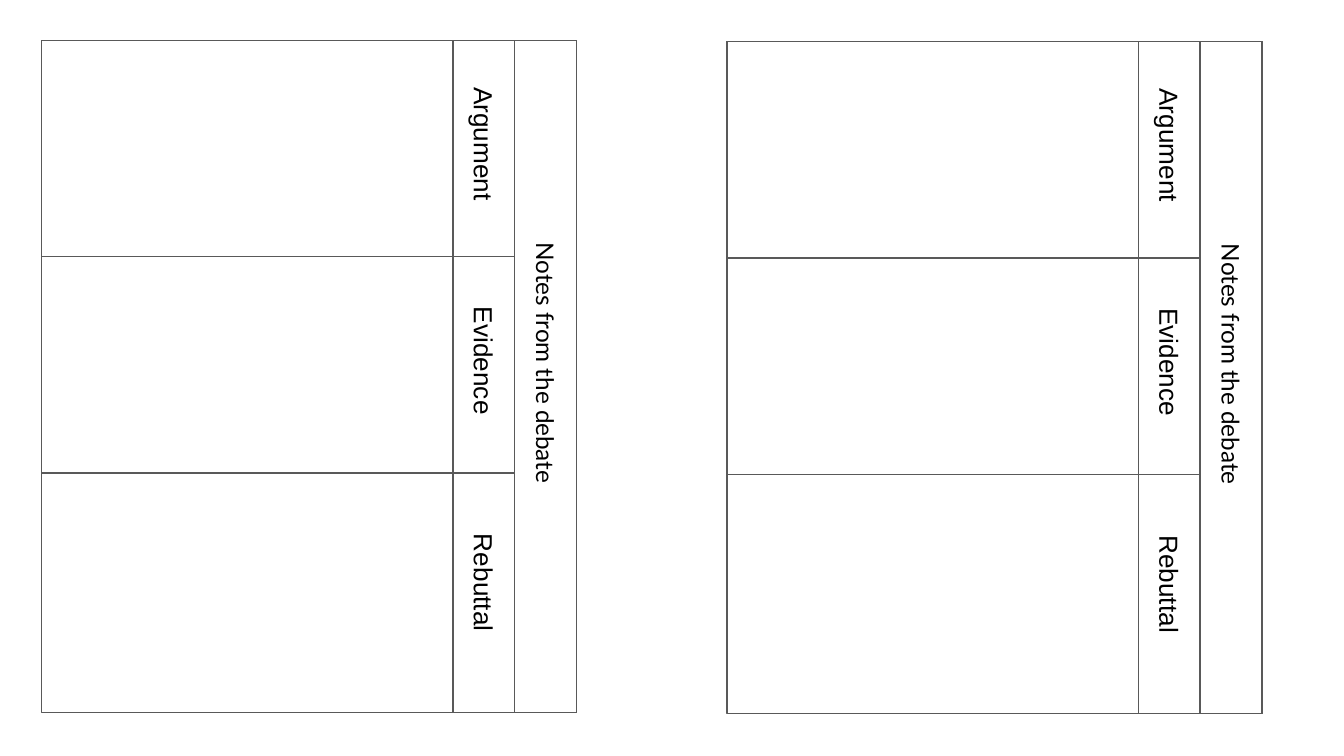
import pptx
import pptx.util
from dataclasses import dataclass
from pptx.dml.color import RGBColor
from pptx.enum.shapes import MSO_SHAPE
from pptx.enum.text import MSO_AUTO_SIZE, PP_ALIGN

Inches, Pt = pptx.util.Inches, pptx.util.Pt


@dataclass(frozen=True)
class Theme:
    paper: RGBColor = RGBColor(0xFF, 0xFF, 0xFF)
    rule: RGBColor = RGBColor(0x59, 0x59, 0x59)
    ink: RGBColor = RGBColor(0, 0, 0)
    line: float = 0.75
    label: tuple = ("Arial", 14)
    title: tuple = ("Lato", 13)


THEME = Theme()

# Content: label, text box length, centre measured from the top of the sheet
TITLE = ("Notes from the debate", 3.16, 2.4)
LABELS = [("Argument", 1.1, 0.8), ("Evidence", 1.03, 2.4), ("Rebuttal", 0.93, 4.04)]

# Sheet grid in inches: the last row takes the height that is left
SHEETS = [(0.31, 0.3), (5.41, 0.31)]
WIDE, TALL = 3.98, 5
BAND, ROW = 0.46, 1.61
BODY = WIDE - BAND


def add_box(slide, left, top, width, height, filled=True):
    box = slide.shapes.add_shape(
        MSO_SHAPE.RECTANGLE, *map(Inches, (left, top, width, height)))
    box.shadow.inherit = False
    if filled:
        box.fill.solid()
        box.fill.fore_color.rgb = THEME.paper
    else:
        box.fill.background()
    box.line.color.rgb = THEME.rule
    box.line.width = Pt(THEME.line)


def add_label(slide, text, mid_x, mid_y, length, depth, font, align):
    """Add text turned a quarter clockwise about its centre."""
    box = slide.shapes.add_textbox(
        Inches(mid_x - length / 2), Inches(mid_y - depth / 2),
        Inches(length), Inches(depth))
    box.rotation = 90
    frame = box.text_frame
    frame.word_wrap = True
    frame.auto_size = MSO_AUTO_SIZE.SHAPE_TO_FIT_TEXT
    frame.margin_left = frame.margin_right = Inches(0.1)
    frame.margin_top = frame.margin_bottom = Inches(0.1)
    para = frame.paragraphs[0]
    para.alignment = align
    run = para.add_run()
    run.text = text
    run.font.name, size = font
    run.font.size = Pt(size)
    run.font.color.rgb = THEME.ink


def add_sheet(slide, left, top):
    add_box(slide, left, top, WIDE, TALL)
    add_box(slide, left + BODY, top, BAND, TALL, filled=False)
    for row in range(len(LABELS) - 1):
        add_box(slide, left, top + row * ROW, BODY, ROW)
    add_box(slide, left + BODY - BAND, top, BAND, TALL, filled=False)

    for text, length, mid in LABELS:
        add_label(slide, text, left + BODY - BAND / 2, top + mid,
                  length, 0.44, THEME.label, PP_ALIGN.LEFT)
    text, length, mid = TITLE
    add_label(slide, text, left + BODY + BAND / 2, top + mid,
              length, 0.42, THEME.title, PP_ALIGN.CENTER)


def main():
    deck = pptx.Presentation()
    deck.slide_width = Inches(10)
    deck.slide_height = deck.slide_width * 9 // 16
    slide = deck.slides.add_slide(deck.slide_layouts[6])
    slide.background.fill.solid()
    slide.background.fill.fore_color.rgb = THEME.paper
    for left, top in SHEETS:
        add_sheet(slide, left, top)
    deck.save("out.pptx")


if __name__ == "__main__":
    main()
